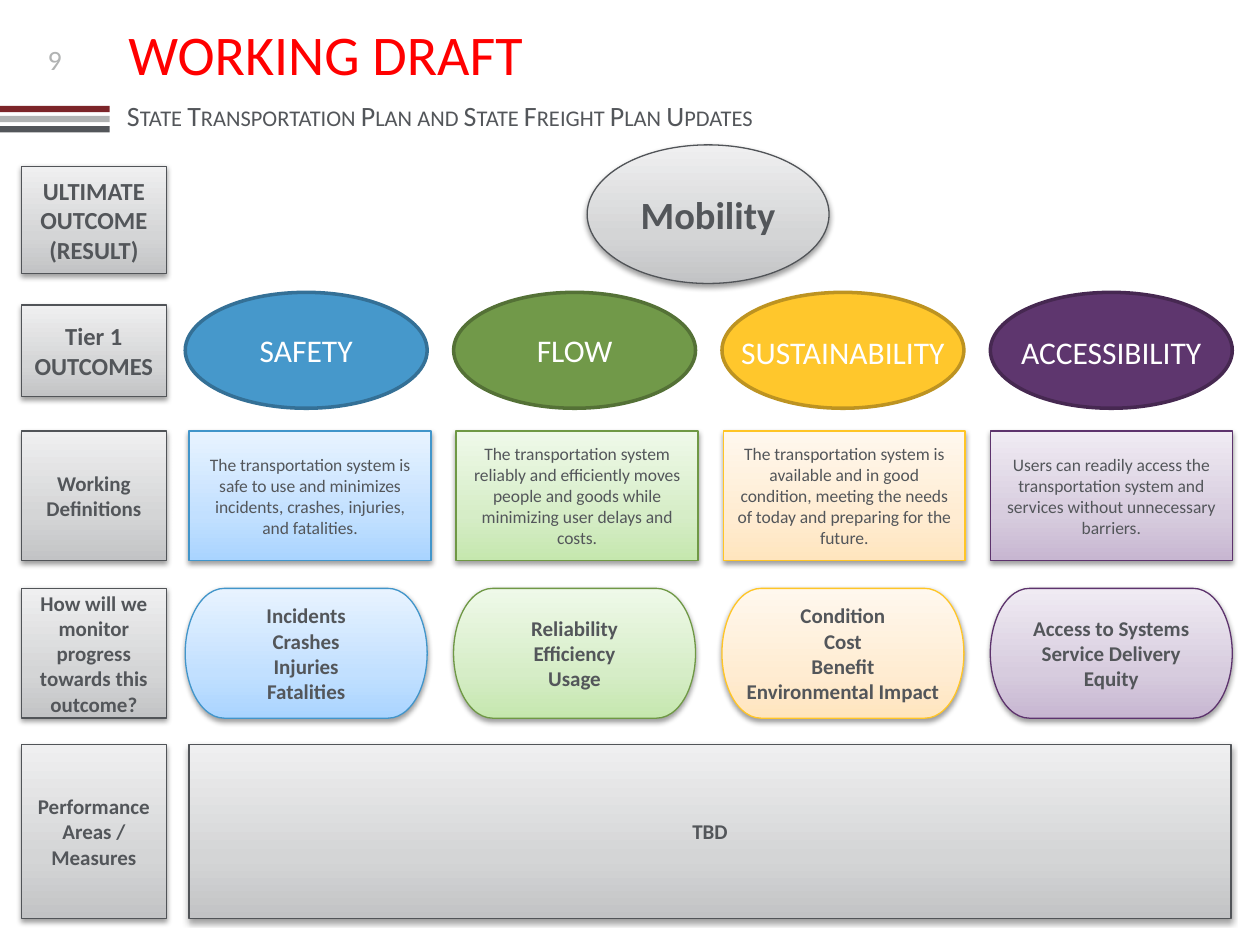
from copy import deepcopy

from lxml.etree import SubElement
from pptx import Presentation
from pptx.dml.color import RGBColor
from pptx.enum.shapes import MSO_SHAPE
from pptx.enum.text import MSO_ANCHOR, PP_ALIGN
from pptx.oxml.ns import qn
from pptx.util import Inches, Pt

INK = RGBColor(0x53, 0x56, 0x5A)
SILVER = RGBColor(0xB1, 0xB3, 0xB3)
MAROON = RGBColor(0x7C, 0x25, 0x29)
RED = RGBColor(0xFF, 0x00, 0x00)
WHITE = RGBColor(0xFF, 0xFF, 0xFF)
BLUE, BLUE_EDGE = RGBColor(0x46, 0x98, 0xCB), RGBColor(0x34, 0x70, 0x96)
GREEN, GREEN_EDGE = RGBColor(0x71, 0x99, 0x49), RGBColor(0x54, 0x71, 0x36)
GOLD, GOLD_EDGE = RGBColor(0xFF, 0xC7, 0x2C), RGBColor(0xBD, 0x93, 0x21)
PURPLE, PURPLE_EDGE = RGBColor(0x5E, 0x36, 0x6E), RGBColor(0x46, 0x28, 0x51)

# Tints run from the bottom of a shape to its top; the last colour is the outline.
GRAY_TINT = (RGBColor(0xC2, 0xC3, 0xC5), RGBColor(0xD4, 0xD5, 0xD6),
             RGBColor(0xEF, 0xEF, 0xF0), RGBColor(0x51, 0x54, 0x58))
BLUE_TINT = (RGBColor(0xA9, 0xD4, 0xFF), RGBColor(0xC2, 0xE0, 0xFF),
             RGBColor(0xE8, 0xF3, 0xFF), RGBColor(0x41, 0x95, 0xCA))
GREEN_TINT = (RGBColor(0xC5, 0xE7, 0xAE), RGBColor(0xD6, 0xED, 0xC7),
              RGBColor(0xEF, 0xF9, 0xE9), RGBColor(0x6F, 0x98, 0x45))
GOLD_TINT = (RGBColor(0xFF, 0xE5, 0xBE), RGBColor(0xFF, 0xEC, 0xD2),
             RGBColor(0xFF, 0xF8, 0xEE), RGBColor(0xFF, 0xC5, 0x26))
PURPLE_TINT = (RGBColor(0xC7, 0xB6, 0xD1), RGBColor(0xD7, 0xCC, 0xDE),
               RGBColor(0xF0, 0xEB, 0xF3), RGBColor(0x5D, 0x33, 0x6D))

prs = Presentation()
prs.slide_width, prs.slide_height = Inches(10), Inches(7.5)
s = prs.slides.add_slide(prs.slide_layouts[6])


def add_text(text, at=None, sp=None, size=12, color=INK, bold=False,
             align=PP_ALIGN.CENTER, wrap=True, small_caps=False):
    """Write text, one paragraph a line, into sp or into a new text box."""
    box = sp if sp is not None else s.shapes.add_textbox(*map(Inches, at))
    tf = box.text_frame
    tf.word_wrap = wrap
    tf.vertical_anchor = MSO_ANCHOR.MIDDLE if sp is not None else MSO_ANCHOR.TOP
    for i, line in enumerate(text.split("\n")):
        p = tf.add_paragraph() if i else tf.paragraphs[0]
        p.alignment = align
        r = p.add_run()
        r.text = line
        r.font.name, r.font.size, r.font.bold = "Calibri", Pt(size), bold
        r.font.color.rgb = color
        if small_caps:
            r.font._element.set("cap", "small")


def add_panel(kind, at, tint, text, **fmt):
    """Add a shape with a vertical gradient, a thin outline and a soft shadow."""
    sp = s.shapes.add_shape(kind, *map(Inches, at))
    sp.fill.gradient()
    sp.fill.gradient_angle = 90
    stops = sp._element.spPr.find(".//" + qn("a:gsLst"))
    stops.append(deepcopy(stops[0]))
    for stop, position, color in zip(sp.fill.gradient_stops, (0, 0.35, 1), tint):
        stop.position = position
        stop.color.rgb = color
    sp.line.color.rgb = tint[3]
    sp.line.width = Pt(0.75)
    sp.shadow.inherit = False
    shadow = SubElement(sp._element.spPr.find(qn("a:effectLst")), qn("a:outerShdw"),
                        blurRad="40000", dist="20000", dir="5400000", rotWithShape="0")
    black = SubElement(shadow, qn("a:srgbClr"), val="000000")
    SubElement(black, qn("a:alpha"), val="38000")
    add_text(text, sp=sp, **fmt)


# Header
add_text("State Transportation Plan and State Freight Plan Updates",
         at=(0.91, 0.73, 5.5, 0.37), size=16, align=PP_ALIGN.LEFT,
         wrap=False, small_caps=True)
for i, color in enumerate((MAROON, SILVER, INK)):
    sp = s.shapes.add_shape(MSO_SHAPE.RECTANGLE, 0, Inches(0.84 + 0.08 * i),
                            Inches(0.87), Inches(0.05))
    sp.fill.solid()
    sp.fill.fore_color.rgb = color
    sp.line.fill.background()
    sp.shadow.inherit = False
add_text("9", at=(0, 0.29, 0.87, 0.37), size=16, color=SILVER)
add_text("WORKING DRAFT", at=(0.92, 0.11, 3.54, 0.64), size=32, color=RED,
         align=PP_ALIGN.LEFT, wrap=False)

# Row labels: top, height, text size, text
LABEL_LEFT, LABEL_W = 0.17, 1.15
LABELS = [
    (1.32, 0.85, 14, "ULTIMATE OUTCOME (RESULT)"),
    (2.42, 0.73, 14, "Tier 1\nOUTCOMES"),
    (3.42, 1.03, 12, "Working Definitions"),
    (4.67, 1.03, 12, "How will we monitor progress towards this outcome?"),
    (5.91, 1.38, 12, "Performance Areas / Measures"),
]
for top, height, size, text in LABELS:
    add_panel(MSO_SHAPE.RECTANGLE, (LABEL_LEFT, top, LABEL_W, height), GRAY_TINT,
              text, size=size, bold=True)

# Outcome columns
COL_LEFT, COL_STEP, COL_W = 1.47, 2.13, 1.92
OUTCOMES = [
    ("SAFETY", BLUE, BLUE_EDGE, BLUE_TINT,
     "The transportation system is safe to use and minimizes incidents, crashes, "
     "injuries, and fatalities.",
     "Incidents\nCrashes\nInjuries\nFatalities"),
    ("FLOW", GREEN, GREEN_EDGE, GREEN_TINT,
     "The transportation system reliably and efficiently moves people and goods "
     "while minimizing user delays and costs.",
     "Reliability\nEfficiency\nUsage"),
    ("SUSTAINABILITY", GOLD, GOLD_EDGE, GOLD_TINT,
     "The transportation system is available and in good condition, meeting the "
     "needs of today and preparing for the future.",
     "Condition\nCost\nBenefit\nEnvironmental Impact"),
    ("ACCESSIBILITY", PURPLE, PURPLE_EDGE, PURPLE_TINT,
     "Users can readily access the transportation system and services without "
     "unnecessary barriers.",
     "Access to Systems Service Delivery\nEquity"),
]
for i, (name, color, edge, tint, definition, measures) in enumerate(OUTCOMES):
    left = COL_LEFT + COL_STEP * i
    sp = s.shapes.add_shape(MSO_SHAPE.OVAL, Inches(left), Inches(2.32),
                            Inches(COL_W), Inches(0.92))
    sp.fill.solid()
    sp.fill.fore_color.rgb = color
    sp.line.color.rgb = edge
    sp.line.width = Pt(2)
    sp.shadow.inherit = False
    if len(name) > 8:  # too wide for the text area of an ellipse
        add_text(name, at=(left + 0.05, 2.59, COL_W - 0.1, 0.4), size=18,
                 color=WHITE, wrap=False)
    else:
        add_text(name, sp=sp, size=18, color=WHITE)
    add_panel(MSO_SHAPE.RECTANGLE, (1.5 + 2.12 * i, 3.42, COL_W, 1.03), tint,
              definition, size=10)
    add_panel(MSO_SHAPE.FLOWCHART_TERMINATOR, (left, 4.67, COL_W, 1.03), tint,
              measures, bold=True)

add_panel(MSO_SHAPE.OVAL, (4.66, 1.15, COL_W, 1.1), GRAY_TINT, "Mobility",
          size=22, bold=True)
add_panel(MSO_SHAPE.RECTANGLE, (1.5, 5.91, 8.27, 1.38), GRAY_TINT, "TBD", bold=True)

prs.save("out.pptx")
